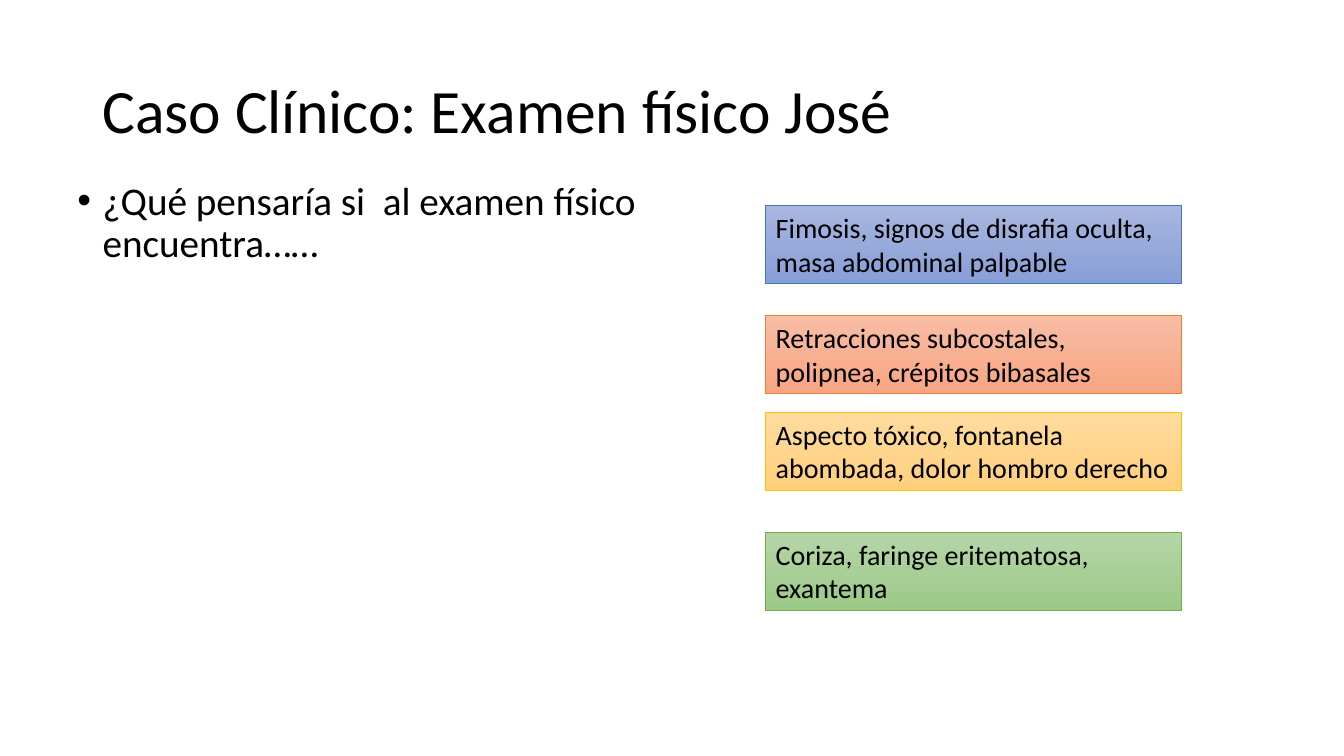
from lxml.etree import SubElement
from pptx import Presentation
from pptx.dml.color import RGBColor
from pptx.enum.shapes import MSO_SHAPE as Shape
from pptx.enum.text import MSO_ANCHOR as Anchor, PP_ALIGN as Align
from pptx.oxml.ns import qn
from pptx.util import Pt

FONT = "Calibri"
BLACK = RGBColor(0x00, 0x00, 0x00)

# Line, gradient top and gradient bottom of each finding
BLUE = (RGBColor(0x44, 0x72, 0xC4), RGBColor(0xA8, 0xB7, 0xDF), RGBColor(0x88, 0x9E, 0xD7))
ORANGE = (RGBColor(0xED, 0x7D, 0x31), RGBColor(0xF7, 0xBD, 0xA5), RGBColor(0xF8, 0xA5, 0x82))
GOLD = (RGBColor(0xFF, 0xC0, 0x00), RGBColor(0xFF, 0xDB, 0x9E), RGBColor(0xFF, 0xD0, 0x7C))
GREEN = (RGBColor(0x70, 0xAD, 0x47), RGBColor(0xB5, 0xD5, 0xA7), RGBColor(0x9C, 0xC9, 0x87))

# Offset from the top of the column, colours, wording
FINDINGS = [
    (0, BLUE, "Fimosis, signos de disrafia oculta, masa abdominal palpable"),
    (78.5, ORANGE, "Retracciones subcostales, polipnea, crépitos bibasales"),
    (147.6, GOLD, "Aspecto tóxico, fontanela abombada, dolor hombro derecho"),
    (233.3, GREEN, "Coriza, faringe eritematosa, exantema"),
]
FINDING_HEIGHT = 55.7


def write(shape, text, size, anchor=Anchor.TOP):
    frame = shape.text_frame
    frame.word_wrap = True
    frame.vertical_anchor = anchor
    para = frame.paragraphs[0]
    para.alignment = Align.LEFT
    span = para.add_run()
    span.text = text
    span.font.name = FONT
    span.font.size = Pt(size)
    span.font.color.rgb = BLACK
    return para


def add_title(page, left, top, width, height):
    box = page.shapes.add_textbox(Pt(left), Pt(top), Pt(width), Pt(height))
    para = write(box, "Caso Clínico: Examen físico José", 44, Anchor.MIDDLE)
    para.line_spacing = 0.9


def add_question(page, left, top, width, height):
    box = page.shapes.add_textbox(Pt(left), Pt(top), Pt(width), Pt(height))
    para = write(box, "¿Qué pensaría si  al examen físico encuentra……", 28)
    para.line_spacing = 0.9
    para.space_before = Pt(10)

    # Hanging bullet
    props = para._p.get_or_add_pPr()
    props.set("marL", str(Pt(18)))
    props.set("indent", str(-Pt(18)))
    SubElement(props, qn("a:buFont"), typeface="Arial")
    SubElement(props, qn("a:buChar"), char="•")


def add_findings(page, left, top, width):
    for offset, (line, light, dark), text in FINDINGS:
        box = page.shapes.add_shape(
            Shape.RECTANGLE, Pt(left), Pt(top + offset), Pt(width), Pt(FINDING_HEIGHT))
        box.shadow.inherit = False
        box.line.color.rgb = line
        box.line.width = Pt(0.5)

        # Vertical gradient, light at the top
        box.fill.gradient()
        box.fill.gradient_angle = 270
        for stop, color in zip(box.fill.gradient_stops, (light, dark)):
            stop.color.rgb = color
        write(box, text, 20)


def main():
    deck = Presentation()
    deck.slide_width, deck.slide_height = Pt(960), Pt(540)
    page = deck.slides.add_slide(deck.slide_layouts[6])
    add_title(page, 66, 28.75, 828, 104.4)
    add_question(page, 48.2, 126, 476.6, 400.3)
    add_findings(page, 547, 146.9, 296.6)
    deck.save("out.pptx")


if __name__ == "__main__":
    main()
